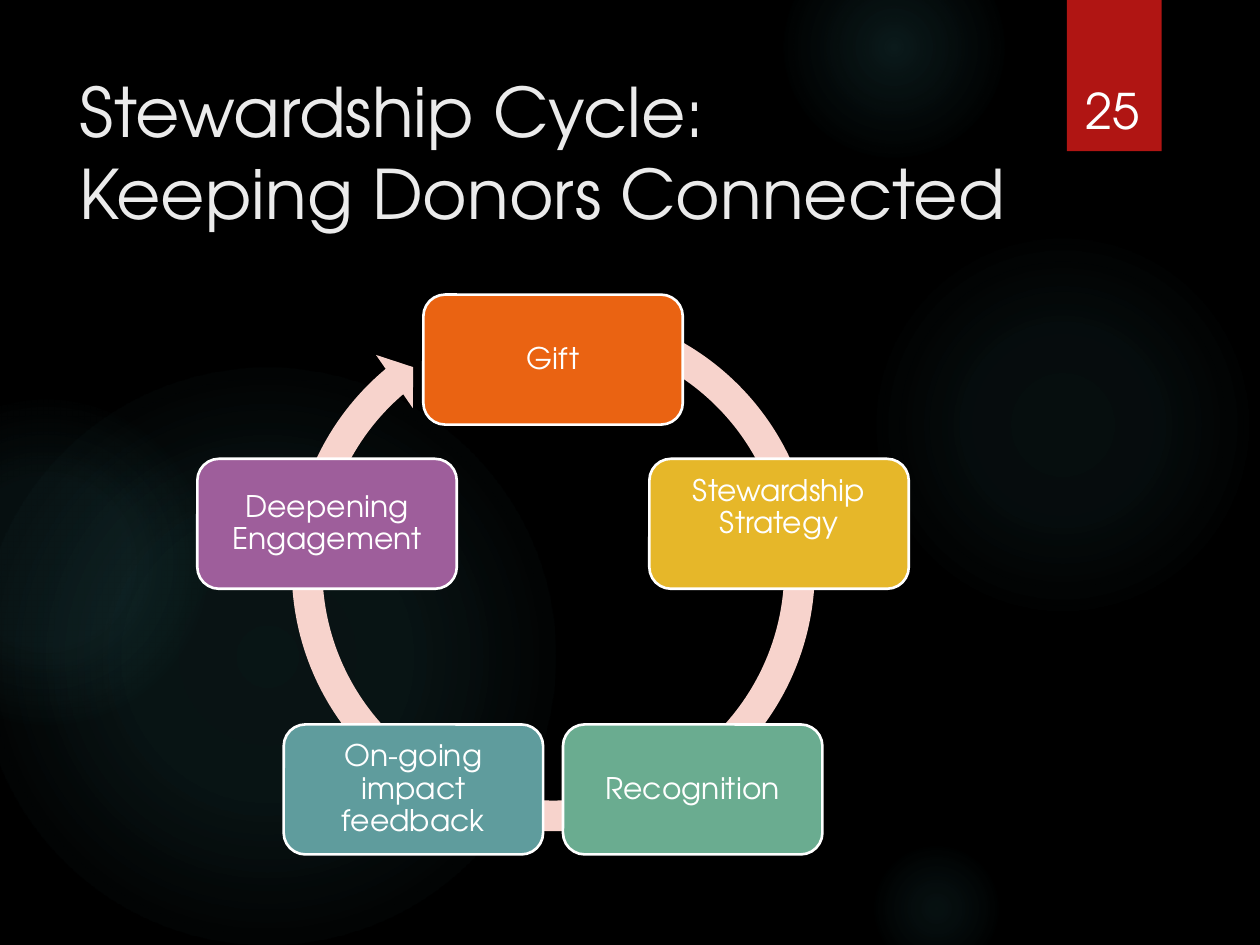
import math

import lxml.etree
import pptx
import pptx.dml.color
import pptx.enum.shapes
import pptx.enum.text
import pptx.oxml.ns
import pptx.util

Cm = pptx.util.Cm
SHAPE = pptx.enum.shapes.MSO_SHAPE
ALIGN = pptx.enum.text.PP_ALIGN
ANCHOR = pptx.enum.text.MSO_ANCHOR
COLORS = {
    "background": "000000",
    "glow": "50B9C1",
    "tab": "B01513",
    "title": "EBEBEB",
    "white": "FFFFFF",
    "arrow": "F7D3CC",
    "gift": "EA6312",
    "strategy": "E6B729",
    "recognition": "6AAC90",
    "feedback": "5F9C9D",
    "engagement": "9E5E9B",
}


def rgb(name):
    return pptx.dml.color.RGBColor.from_string(COLORS[name])


class CycleSlide:
    font = "TeX Gyre Adventor"
    inset = 0.18

    def __init__(self, prs):
        self.s = prs.slides.add_slide(prs.slide_layouts[6])
        fill = self.s.background.fill
        fill.solid()
        fill.fore_color.rgb = rgb("background")

    def shape(self, kind, x, y, w, h, color, outline=None):
        sp = self.s.shapes.add_shape(kind, Cm(x), Cm(y), Cm(w), Cm(h))
        sp.shadow.inherit = False
        sp.fill.solid()
        sp.fill.fore_color.rgb = rgb(color)
        if outline:
            sp.line.color.rgb = rgb(outline)
            sp.line.width = pptx.util.Pt(1.5)
        else:
            sp.line.fill.background()
        return sp

    def glow(self, x, y, size, stops):
        sp = self.shape(SHAPE.OVAL, x, y, size, size, "glow")
        stop_xml = "".join(
            f'<a:gs pos="{pos * 1000}"><a:srgbClr val="{COLORS["glow"]}">'
            f'<a:alpha val="{alpha * 1000}"/></a:srgbClr></a:gs>'
            for pos, alpha in stops
        )
        gradient = lxml.etree.fromstring(
            f'<a:gradFill {pptx.oxml.ns.nsdecls("a")} rotWithShape="1">'
            f'<a:gsLst>{stop_xml}</a:gsLst><a:path path="circle">'
            '<a:fillToRect l="50000" t="50000" r="50000" b="50000"/>'
            "</a:path></a:gradFill>"
        )
        sppr = sp.element.spPr
        sppr.replace(sppr.find(pptx.oxml.ns.qn("a:solidFill")), gradient)

    def set_text(self, tf, text, size, color, align, anchor):
        tf.word_wrap = True
        tf.vertical_anchor = anchor
        p = tf.paragraphs[0]
        p.text = text
        p.alignment = align
        p.font.name = self.font
        p.font.size = pptx.util.Pt(size)
        p.font.color.rgb = rgb(color)
        return p

    def text(self, x, y, w, h, text, size, color, align, anchor):
        sp = self.s.shapes.add_textbox(Cm(x), Cm(y), Cm(w), Cm(h))
        self.set_text(sp.text_frame, text, size, color, align, anchor)

    def arrow(self, x, y, size, adjustments):
        sp = self.shape(SHAPE.CIRCULAR_ARROW, x, y, size, size, "arrow")
        for i, value in enumerate(adjustments):
            sp.adjustments[i] = value

    def step(self, cx, cy, w, h, text, color, lift):
        sp = self.shape(SHAPE.ROUNDED_RECTANGLE, cx - w / 2, cy - h / 2, w, h, color, "white")
        tf = sp.text_frame
        tf.margin_left = tf.margin_right = tf.margin_top = Cm(self.inset)
        tf.margin_bottom = Cm(self.inset + lift)
        p = self.set_text(tf, text, 17, "white", ALIGN.CENTER, ANCHOR.MIDDLE)
        p.line_spacing = 0.9


def main():
    prs = pptx.Presentation()
    prs.slide_width, prs.slide_height = Cm(25.4), Cm(19.05)
    slide = CycleSlide(prs)

    glows = [
        (17.5, 4.65, 7.82, [(0, 7), (36, 6), (69, 0)]),
        (15.8, -1.27, 4.45, [(0, 14), (36, 7), (73, 0)]),
        (17.5, 16.94, 2.74, [(0, 9), (36, 5), (66, 0)]),
        (-0.43, 7.42, 11.63, [(0, 11), (36, 10), (75, 0)]),
        (-2.34, 8.05, 6.55, [(0, 8), (36, 8), (72, 0)]),
    ]
    for glow in glows:
        slide.glow(*glow)

    slide.shape(SHAPE.RECTANGLE, 21.51, 0, 1.91, 3.05, "tab")
    slide.text(1.35, 1.27, 19.58, 3.89, "Stewardship Cycle:\vKeeping Donors Connected",
               39, "title", ALIGN.LEFT, ANCHOR.TOP)
    slide.text(21.56, 0.81, 1.75, 2.13, "25", 28, "white", ALIGN.CENTER, ANCHOR.BOTTOM)

    slide.arrow(5.54, 5.87, 11.23, [0.055, 3.307, 137.892, 173.779, 0.058])
    steps = [
        ("Gift", "gift", 0),
        ("Stewardship\vStrategy", "strategy", 0.65),
        ("Recognition", "recognition", 0),
        ("On-going impact feedback", "feedback", 0),
        ("Deepening Engagement", "engagement", 0),
    ]
    center_x, center_y, radius = 11.15, 12.04, 4.79
    for i, (text, color, lift) in enumerate(steps):
        angle = 2 * math.pi * i / len(steps)
        slide.step(center_x + radius * math.sin(angle), center_y - radius * math.cos(angle),
                   5.23, 2.62, text, color, lift)

    prs.save("out.pptx")


if __name__ == "__main__":
    main()
